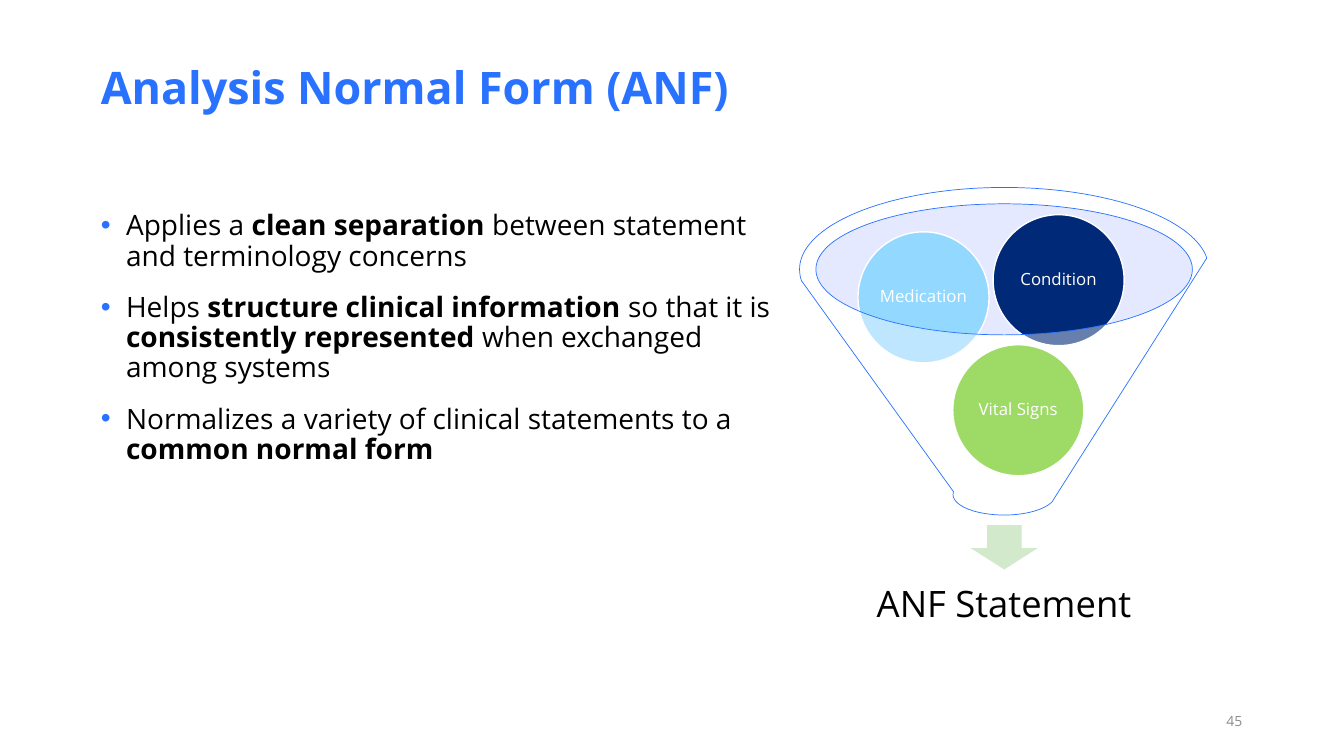
import pptx
import pptx.util
from lxml import etree
from pptx.dml.color import RGBColor
from pptx.enum.shapes import MSO_SHAPE
from pptx.enum.text import MSO_ANCHOR, PP_ALIGN
from pptx.oxml.ns import qn
from pptx.util import Inches

BLUE = RGBColor(0x29, 0x72, 0xFF)
NAVY = RGBColor(0x00, 0x2A, 0x77)
SKY = RGBColor(0x93, 0xD8, 0xFF)
GREEN = RGBColor(0x5D, 0xC2, 0x00)
PALE_GREEN = RGBColor(0xD2, 0xE9, 0xCC)
LAVENDER = RGBColor(0xBE, 0xC9, 0xFF)
GRAY = RGBColor(0x8C, 0x8C, 0x8C)
BLACK = RGBColor(0x00, 0x00, 0x00)
WHITE = RGBColor(0xFF, 0xFF, 0xFF)


class SlideBuilder:
    font_name = "Open Sans"

    def __init__(self, page):
        self.page = page

    def frame(self, shape, insets, anchor=MSO_ANCHOR.MIDDLE, wrap=True):
        frame = shape.text_frame
        frame.word_wrap = wrap
        frame.vertical_anchor = anchor
        (frame.margin_left, frame.margin_top,
         frame.margin_right, frame.margin_bottom) = map(Inches, insets)
        return frame

    def style(self, para, size, color, align=PP_ALIGN.LEFT, spacing=0.9):
        para.alignment = align
        para.line_spacing = spacing
        para.font.name = self.font_name
        para.font.size = pptx.util.Pt(size)
        para.font.color.rgb = color

    def title(self, text, place):
        title = self.page.shapes.title
        title.left, title.top, title.width, title.height = map(Inches, place)
        para = self.frame(title, (0, 0.05, 0.1, 0)).paragraphs[0]
        para.text = text
        self.style(para, 32, BLUE, spacing=0.8)
        para.font.bold = True

    def text(self, text, place, size, color, align, spacing=0.9):
        box = self.page.shapes.add_textbox(*map(Inches, place))
        para = self.frame(box, (0.1, 0.05, 0.1, 0.05)).paragraphs[0]
        para.text = text
        self.style(para, size, color, align, spacing)

    def bullets(self, items, place):
        """Parts of an item between ** marks are bold."""
        box = self.page.shapes.add_textbox(*map(Inches, place))
        frame = self.frame(box, (0, 0, 0, 0), MSO_ANCHOR.TOP)
        for index, item in enumerate(items):
            para = frame.add_paragraph() if index else frame.paragraphs[0]
            self.bullet_mark(para)
            self.style(para, 20, BLACK)
            para.space_before = pptx.util.Pt(10 if index else 0)
            para.space_after = pptx.util.Pt(5)
            for part, words in enumerate(item.split("**")):
                if words:
                    span = para.add_run()
                    span.text = words
                    if part % 2:
                        span.font.bold = True

    def bullet_mark(self, para):
        properties = para._p.get_or_add_pPr()
        properties.set("marL", str(Inches(0.25)))
        properties.set("indent", str(-Inches(0.25)))
        color = etree.SubElement(properties, qn("a:buClr"))
        etree.SubElement(color, qn("a:srgbClr"), val=str(BLUE))
        etree.SubElement(properties, qn("a:buFont"), typeface="Arial")
        etree.SubElement(properties, qn("a:buChar"), char="•")

    def shape(self, kind, place, fill, opacity=100, line=None, weight=1):
        shape = self.page.shapes.add_shape(kind, *map(Inches, place))
        shape.shadow.inherit = False
        shape.fill.solid()
        shape.fill.fore_color.rgb = fill
        if opacity < 100:
            color = shape._element.spPr.find(qn("a:solidFill"))[0]
            etree.SubElement(color, qn("a:alpha"), val=str(opacity * 1000))
        if line is None:
            shape.line.fill.background()
        else:
            shape.line.color.rgb = line
            shape.line.width = pptx.util.Pt(weight)
        return shape

    def ball(self, label, left, top, fill):
        ball = self.shape(MSO_SHAPE.OVAL, (left, top, 1.3, 1.3), fill, line=WHITE)
        para = self.frame(ball, (0.02,) * 4, wrap=False).paragraphs[0]
        para.text = label
        self.style(para, 12, WHITE, PP_ALIGN.CENTER)


def main():
    deck = pptx.Presentation()
    deck.slide_width, deck.slide_height = Inches(13.33), Inches(7.5)
    builder = SlideBuilder(deck.slides.add_slide(deck.slide_layouts[5]))

    # Title, bullets and page number
    builder.title("Analysis Normal Form (ANF)", (1, 0.41, 10.54, 0.94))
    builder.bullets([
        "Applies a **clean separation **between statement and terminology concerns",
        "Helps **structure clinical information **so that it is "
        "**consistently represented **when exchanged among systems",
        "Normalizes a variety of clinical statements to a **common normal form**",
    ], (1, 2.1, 6.71, 4.5))
    builder.text("45", (9.42, 6.95, 3, 0.4), 10, GRAY, PP_ALIGN.RIGHT, 1)

    # Funnel mouth and its result
    builder.shape(MSO_SHAPE.OVAL, (8.09, 2.02, 3.74, 1.3), LAVENDER, 40)
    builder.shape(MSO_SHAPE.DOWN_ARROW, (9.6, 5.2, 0.72, 0.46), PALE_GREEN, line=WHITE)
    builder.text("ANF Statement", (8.22, 5.57, 3.48, 0.87), 26, BLACK, PP_ALIGN.CENTER)

    # Inputs, seen through the funnel
    for label, left, top, fill in (
        ("Vital Signs", 9.45, 3.42, GREEN),
        ("Medication", 8.51, 2.3, SKY),
        ("Condition", 9.85, 2.13, NAVY),
    ):
        builder.ball(label, left, top, fill)
    builder.shape(MSO_SHAPE.FUNNEL, (7.93, 1.86, 4.06, 3.25), WHITE, 40, BLUE, 0.5)

    deck.save("out.pptx")


if __name__ == "__main__":
    main()
